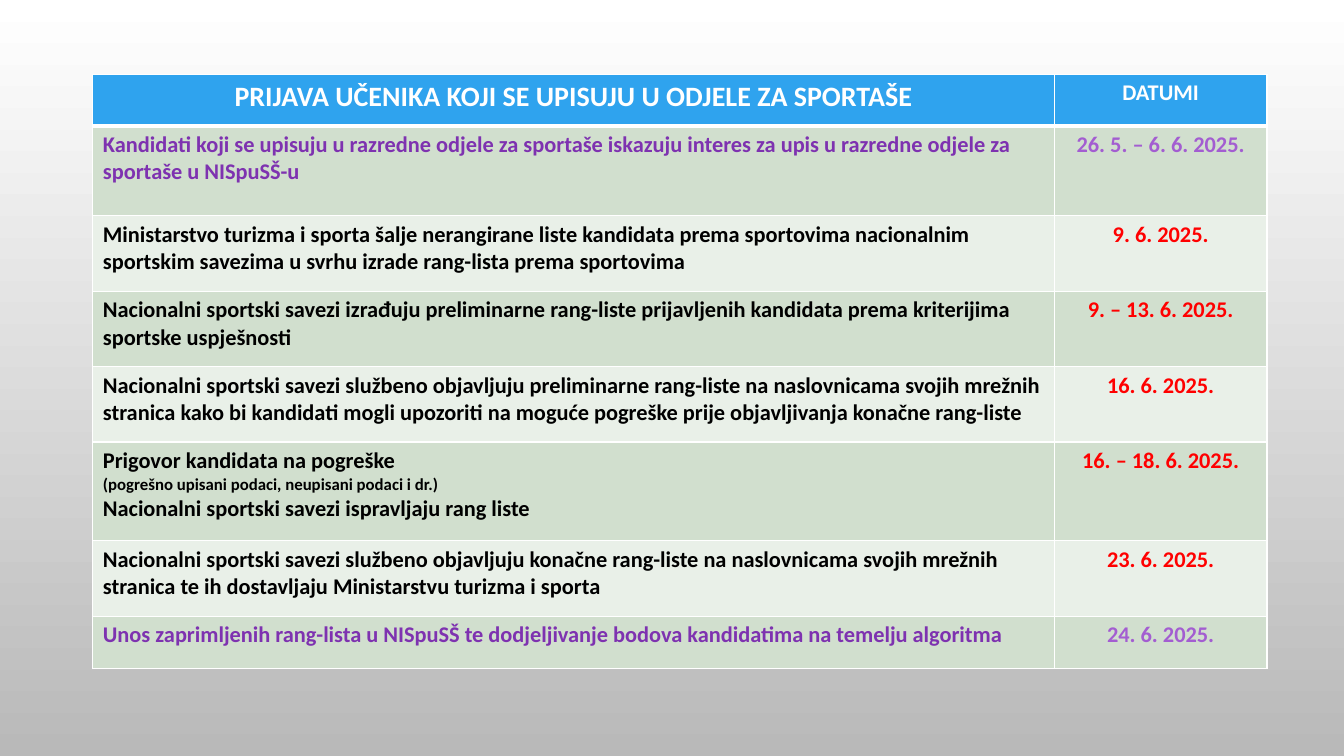
from lxml import etree
from pptx import Presentation
from pptx import util as u
from pptx.dml import color
from pptx.enum import text
from pptx.oxml import ns

WHITE, BLUE, BLACK, RED = "FFFFFF", "2FA3EE", "000000", "FF0000"
PURPLE, LILAC = "7E32B0", "A35DD1"
BANDS = "D1DFCE", "E9F0E8"
HEAD = "PRIJAVA UČENIKA KOJI SE UPISUJU U ODJELE ZA SPORTAŠE", "DATUMI"
WIDTHS = 24.23, 5.36

# height in cm, task, dates, task colour, date colour
STEPS = [
    (2.26, "Kandidati koji se upisuju u razredne odjele za sportaše iskazuju "
     "interes za upis u razredne odjele za sportaše u NISpuSŠ-u",
     "26. 5. – 6. 6. 2025.", PURPLE, LILAC),
    (1.9, "Ministarstvo turizma i sporta šalje nerangirane liste kandidata prema "
     "sportovima nacionalnim sportskim savezima u svrhu izrade rang-lista "
     "prema sportovima", "9. 6. 2025.", BLACK, RED),
    (1.9, "Nacionalni sportski savezi izrađuju preliminarne rang-liste "
     "prijavljenih kandidata prema kriterijima sportske uspješnosti",
     "9. – 13. 6. 2025.", BLACK, RED),
    (1.9, "Nacionalni sportski savezi službeno objavljuju preliminarne rang-liste "
     "na naslovnicama svojih mrežnih stranica kako bi kandidati mogli upozoriti "
     "na moguće pogreške prije objavljivanja konačne rang-liste",
     "16. 6. 2025.", BLACK, RED),
    (2.49, "Prigovor kandidata na pogreške\n"
     "(pogrešno upisani podaci, neupisani podaci i dr.)\n"
     "Nacionalni sportski savezi ispravljaju rang liste",
     "16. – 18. 6. 2025.", BLACK, RED),
    (1.9, "Nacionalni sportski savezi službeno objavljuju konačne rang-liste na "
     "naslovnicama svojih mrežnih stranica te ih dostavljaju Ministarstvu "
     "turizma i sporta", "23. 6. 2025.", BLACK, RED),
    (1.32, "Unos zaprimljenih rang-lista u NISpuSŠ te dodjeljivanje bodova "
     "kandidatima na temelju algoritma", "24. 6. 2025.", PURPLE, LILAC),
]


def rgb(code):
    return color.RGBColor.from_string(code)


class Page:
    font = "Calibri"
    size = 16

    def __init__(self, slide):
        self.slide = slide

    def shade(self, top, bottom):
        """Fill the background with a vertical gradient."""
        fill = self.slide.background.fill
        fill.gradient()
        fill.gradient_angle = 270
        for stop, code in zip(fill.gradient_stops, (top, bottom)):
            stop.color.rgb = rgb(code)

    def table(self, left, top, widths, heights):
        frame = self.slide.shapes.add_table(
            len(heights), len(widths), u.Cm(left), u.Cm(top),
            u.Cm(sum(widths)), u.Cm(sum(heights)))
        grid = frame.table
        for col, width in zip(grid.columns, widths):
            col.width = u.Cm(width)
        for row, height in zip(grid.rows, heights):
            row.height = u.Cm(height)
        return grid

    def edge(self, cell, top, bottom):
        """Draw white cell borders, with top and bottom widths in points."""
        props = cell._tc.get_or_add_tcPr()
        for side, width in zip("LRTB", (1, 1, top, bottom)):
            line = etree.SubElement(props, ns.qn("a:ln" + side), w=str(u.Pt(width)))
            fill = etree.SubElement(line, ns.qn("a:solidFill"))
            etree.SubElement(fill, ns.qn("a:srgbClr"), val=WHITE)

    def cell(self, cell, words, ink, back, size=None, center=False, top=1, bottom=1):
        self.edge(cell, top, bottom)
        cell.fill.solid()
        cell.fill.fore_color.rgb = rgb(back)
        cell.text_frame.text = words
        for para in cell.text_frame.paragraphs:
            para.alignment = text.PP_ALIGN.CENTER if center else text.PP_ALIGN.LEFT
            for run in para.runs:
                font = run.font
                font.name, font.bold = self.font, True
                # A bracketed remark is set smaller
                font.size = u.Pt(12 if run.text.startswith("(") else size or self.size)
                font.color.rgb = rgb(ink)


def main():
    deck = Presentation()
    deck.slide_width, deck.slide_height = u.Cm(33.87), u.Cm(19.05)
    page = Page(deck.slides.add_slide(deck.slide_layouts[6]))
    page.shade(WHITE, "B9B9B9")

    grid = page.table(2.34, 1.88, WIDTHS, [1.3] + [step[0] for step in STEPS])
    for col, (words, size) in enumerate(zip(HEAD, (20, 16))):
        page.cell(grid.cell(0, col), words, WHITE, BLUE, size, center=True, bottom=3)
    for row, (_, task, dates, ink, tint) in enumerate(STEPS, 1):
        back = BANDS[(row - 1) % 2]
        top = 3 if row == 1 else 1
        page.cell(grid.cell(row, 0), task, ink, back, top=top)
        page.cell(grid.cell(row, 1), dates, tint, back, center=True, top=top)

    deck.save("out.pptx")


if __name__ == "__main__":
    main()
